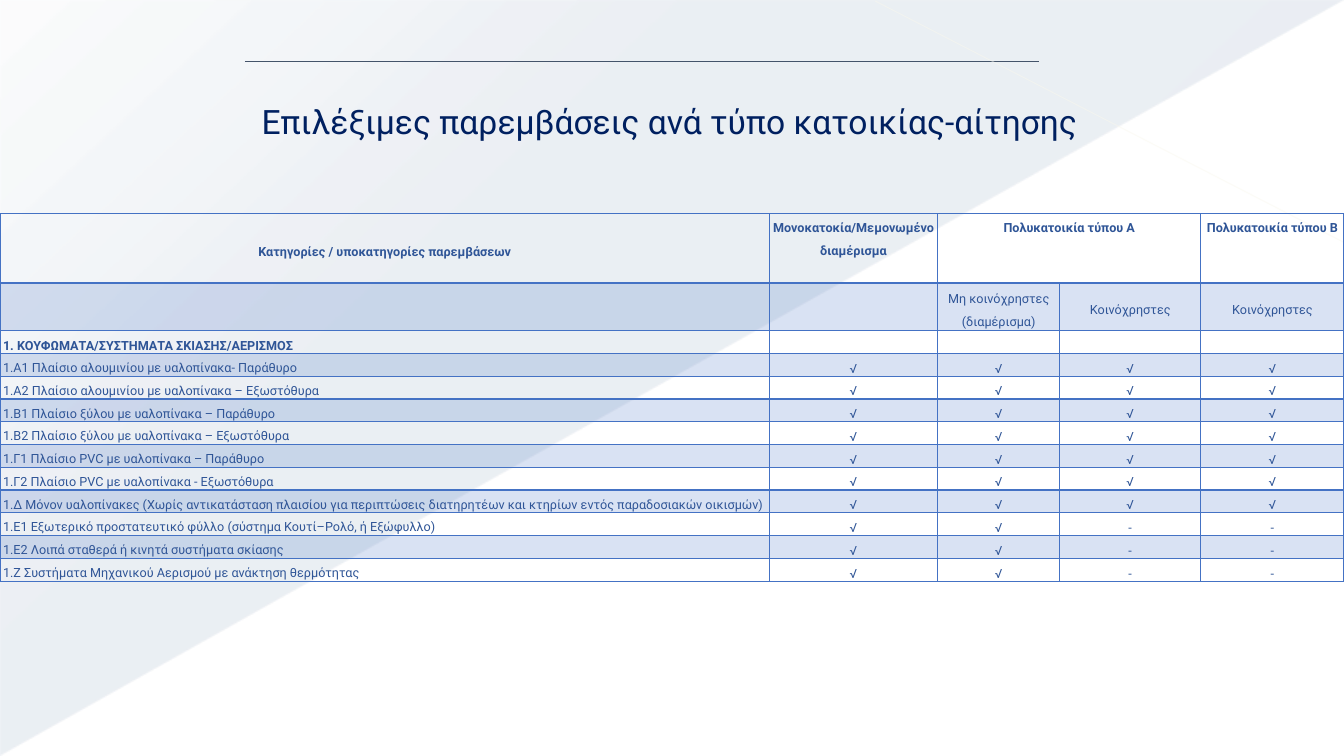
"""Build the slide of eligible interventions per dwelling and application type."""
from typing import NamedTuple

from lxml import etree
from pptx import Presentation
from pptx.dml.color import RGBColor
from pptx.enum.shapes import MSO_CONNECTOR, MSO_SHAPE
from pptx.enum.text import MSO_ANCHOR, PP_ALIGN
from pptx.oxml import parse_xml
from pptx.oxml.ns import nsdecls, qn
from pptx.util import Inches, Pt

LEFT, CENTER = PP_ALIGN.LEFT, PP_ALIGN.CENTER
TOP, MIDDLE, BOTTOM = MSO_ANCHOR.TOP, MSO_ANCHOR.MIDDLE, MSO_ANCHOR.BOTTOM
STRAIGHT = MSO_CONNECTOR.STRAIGHT
TRIANGLE = MSO_SHAPE.RIGHT_TRIANGLE

NAVY = RGBColor(0x00, 0x20, 0x60)
TEXT_BLUE = RGBColor(0x2F, 0x55, 0x97)
TABLE_BLUE = RGBColor(0x44, 0x72, 0xC4)
SHADE_BLUE = RGBColor(0x1F, 0x49, 0x7D)
SLATE = RGBColor(0x44, 0x54, 0x6A)
CREAM = RGBColor(0xFA, 0xF8, 0xEE)

FONT = "Roboto"


class Rule(NamedTuple):
    """A straight line across the slide."""
    start: tuple[float, float]
    end: tuple[float, float]
    color: RGBColor
    width: float
    opacity: int


class Intervention(NamedTuple):
    """A table row: intervention and one mark per dwelling column."""
    name: str
    marks: str


TITLE = "Επιλέξιμες παρεμβάσεις ανά τύπο κατοικίας-αίτησης"
RULES = [
    Rule((2.43, 0.61), (10.31, 0.61), SLATE, 1, 100),
    Rule((13.32, 2.4), (8.68, 0.01), CREAM, 0.75, 45),
]
COLUMN_WIDTHS = [7.63, 1.67, 1.21, 1.4, 1.42]
HEADER_HEIGHT, SUBHEADER_HEIGHT, ROW_HEIGHT = 0.69, 0.47, 0.21
HEADERS = ["Κατηγορίες / υποκατηγορίες παρεμβάσεων", "Μονοκατοκία/Μεμονωμένο διαμέρισμα",
           "Πολυκατοικία τύπου Α", "", "Πολυκατοικία τύπου Β"]
SUBHEADERS = ["", "", "Μη κοινόχρηστες (διαμέρισμα)", "Κοινόχρηστες", "Κοινόχρηστες"]
SECTION = "1. ΚΟΥΦΩΜΑΤΑ/ΣΥΣΤΗΜΑΤΑ ΣΚΙΑΣΗΣ/ΑΕΡΙΣΜΟΣ"
INTERVENTIONS = [
    Intervention("1.Α1 Πλαίσιο αλουμινίου με υαλοπίνακα- Παράθυρο", "√√√√"),
    Intervention("1.Α2 Πλαίσιο αλουμινίου με υαλοπίνακα – Εξωστόθυρα", "√√√√"),
    Intervention("1.B1 Πλαίσιο ξύλου με υαλοπίνακα – Παράθυρο", "√√√√"),
    Intervention("1.B2 Πλαίσιο ξύλου με υαλοπίνακα – Εξωστόθυρα", "√√√√"),
    Intervention("1.Γ1 Πλαίσιο PVC με υαλοπίνακα – Παράθυρο", "√√√√"),
    Intervention("1.Γ2 Πλαίσιο PVC με υαλοπίνακα - Εξωστόθυρα", "√√√√"),
    Intervention("1.Δ Μόνον υαλοπίνακες (Χωρίς αντικατάσταση πλαισίου για περιπτώσεις "
                 "διατηρητέων και κτηρίων εντός παραδοσιακών οικισμών)", "√√√√"),
    Intervention("1.Ε1 Εξωτερικό προστατευτικό φύλλο (σύστημα Κουτί–Ρολό, ή Εξώφυλλο)", "√√--"),
    Intervention("1.Ε2 Λοιπά σταθερά ή κινητά συστήματα σκίασης", "√√--"),
    Intervention("1.Ζ Συστήματα Μηχανικού Αερισμού με ανάκτηση θερμότητας", "√√--"),
]


def set_opacity(element, percent: int) -> None:
    """Make the first RGB colour under an element translucent."""
    color = next(element.iter(qn("a:srgbClr")))
    etree.SubElement(color, qn("a:alpha")).set("val", str(percent * 1000))


def write_text(frame, text: str, *, size: int = 9, color: RGBColor = TEXT_BLUE,
               bold: bool = False, align: PP_ALIGN = LEFT, spacing: float = 1.5,
               after: float = 0) -> None:
    """Put one formatted paragraph in a text frame."""
    frame.word_wrap = True
    paragraph = frame.paragraphs[0]
    paragraph.alignment = align
    paragraph.line_spacing = spacing
    paragraph.space_after = Pt(after)
    if not text:
        paragraph._p.get_or_add_endParaRPr().set("sz", str(size * 100))
        return
    run = paragraph.add_run()
    run.text = text
    run.font.name, run.font.size, run.font.bold = FONT, Pt(size), bold
    run.font.color.rgb = color


def add_backdrop(slide) -> None:
    """Draw the pale diagonal triangle behind everything."""
    backdrop = slide.shapes.add_shape(TRIANGLE, Inches(0.01), Inches(0.01),
                                      Inches(13.31), Inches(7.48))
    backdrop.shadow.inherit = False
    backdrop.line.fill.background()
    backdrop.rotation = 180
    properties = backdrop._element.spPr
    properties.find(qn("a:xfrm")).set("flipH", "1")
    stops = "".join(
        f'<a:gs pos="{position}000"><a:srgbClr val="{SHADE_BLUE}">'
        f'<a:alpha val="{opacity}000"/></a:srgbClr></a:gs>'
        for position, opacity in ((0, 10), (70, 8), (100, 1)))
    properties.find(qn("a:prstGeom")).addnext(parse_xml(
        f'<a:gradFill {nsdecls("a")} rotWithShape="1"><a:gsLst>{stops}</a:gsLst>'
        f'<a:lin ang="{133 * 60000}" scaled="0"/></a:gradFill>'))


def add_rule(slide, rule: Rule) -> None:
    """Draw a straight line without shadow."""
    line = slide.shapes.add_connector(STRAIGHT, *map(Inches, rule.start + rule.end))
    line.line.color.rgb = rule.color
    line.line.width = Pt(rule.width)
    if rule.opacity < 100:
        set_opacity(line._element.spPr, rule.opacity)
    etree.SubElement(line._element.spPr, qn("a:effectLst"))


def add_title(slide) -> None:
    """Place the slide title."""
    frame = slide.shapes.add_textbox(Inches(0.89), Inches(0.94),
                                     Inches(11.5), Inches(0.58)).text_frame
    frame.vertical_anchor = MIDDLE
    write_text(frame, TITLE, size=24, color=NAVY, align=CENTER, spacing=0.9)


def style_cell(cell, row: int) -> None:
    """Set the margins, banded fill and borders of a cell."""
    cell.margin_left = cell.margin_right = Inches(0.03)
    cell.margin_top = cell.margin_bottom = 0
    properties = cell._tc.get_or_add_tcPr()
    if row % 2:
        cell.fill.solid()
        cell.fill.fore_color.rgb = TABLE_BLUE
        set_opacity(properties, 20)
    else:
        cell.fill.background()
    widths = {"L": 1, "R": 1, "T": 2 if row == 1 else 1, "B": 2 if row == 0 else 1}
    for index, (side, width) in enumerate(widths.items()):
        properties.insert(index, parse_xml(
            f'<a:ln{side} {nsdecls("a")} w="{Pt(width)}"><a:solidFill>'
            f'<a:srgbClr val="{TABLE_BLUE}"/></a:solidFill></a:ln{side}>'))


def add_interventions(slide) -> None:
    """Build the table of interventions."""
    rows = [HEADERS, SUBHEADERS, [SECTION, "", "", "", ""]]
    rows += [[item.name, *item.marks] for item in INTERVENTIONS]
    heights = [HEADER_HEIGHT, SUBHEADER_HEIGHT] + [ROW_HEIGHT] * (len(rows) - 2)
    table = slide.shapes.add_table(len(rows), len(COLUMN_WIDTHS), 0, Inches(2.12),
                                   Inches(sum(COLUMN_WIDTHS)), Inches(sum(heights))).table
    table.first_row = table.horz_banding = False
    for column, width in zip(table.columns, COLUMN_WIDTHS):
        column.width = Inches(width)
    for row, (texts, height) in enumerate(zip(rows, heights)):
        table.rows[row].height = Inches(height)
        for column, text in enumerate(texts):
            cell = table.cell(row, column)
            style_cell(cell, row)
            named = column == 0
            if row == 0:
                cell.vertical_anchor = MIDDLE if named else TOP
            elif row == 1:
                cell.vertical_anchor = MIDDLE
            else:
                cell.vertical_anchor = TOP if named and row > 2 else BOTTOM
            write_text(cell.text_frame, text, bold=row in (0, 2),
                       align=LEFT if named and row else CENTER,
                       after=0 if named or row in (0, 2) else 4)
    table.cell(0, 2).merge(table.cell(0, 3))


def main() -> None:
    """Assemble and save the slide."""
    deck = Presentation()
    deck.slide_width, deck.slide_height = Inches(13.33), Inches(7.5)
    slide = deck.slides.add_slide(deck.slide_layouts[6])
    add_backdrop(slide)
    for rule in RULES:
        add_rule(slide, rule)
    add_title(slide)
    add_interventions(slide)
    deck.save("out.pptx")


if __name__ == "__main__":
    main()
